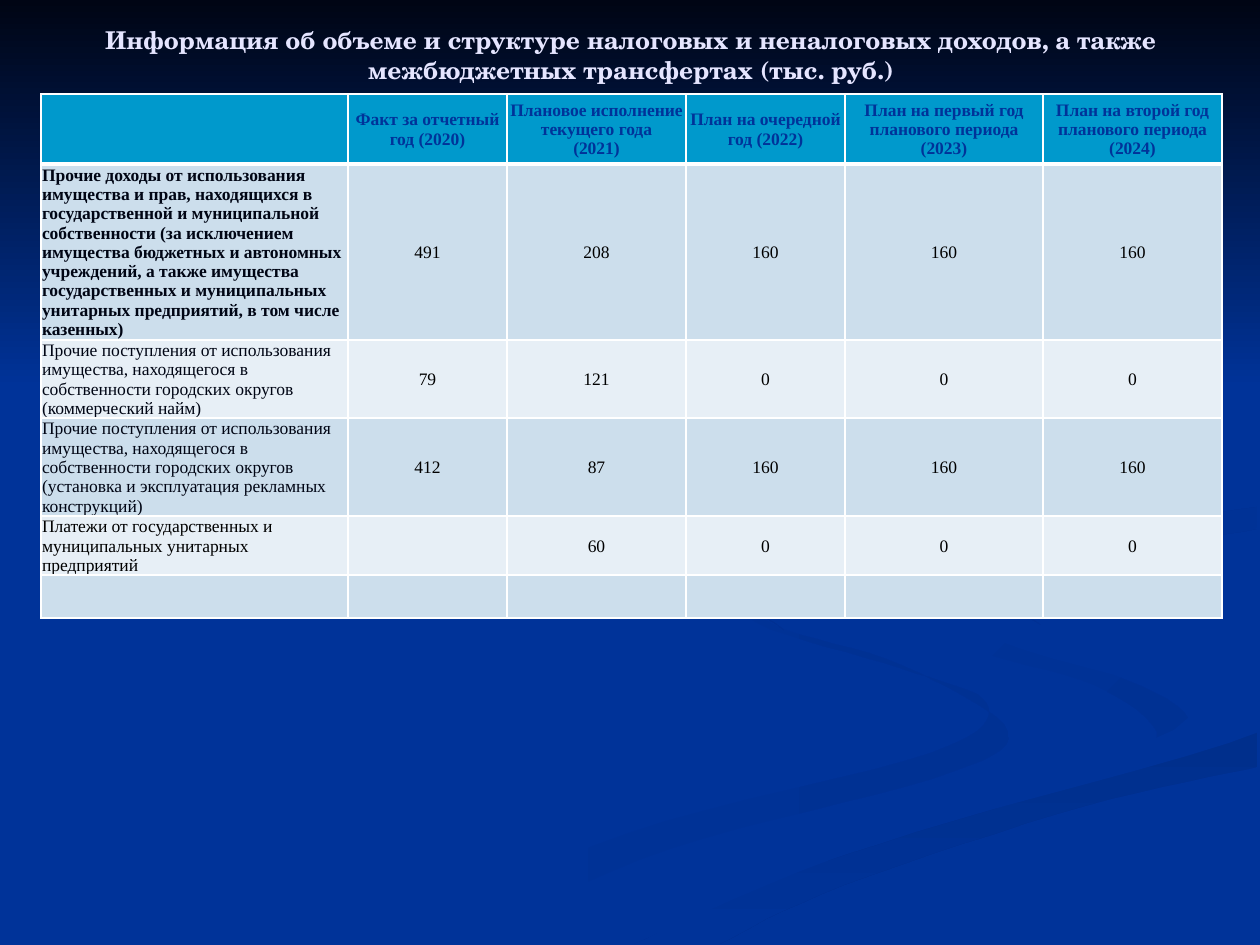
import lxml.etree
import pptx
import pptx.dml.color
import pptx.enum.text
import pptx.oxml.ns
import pptx.util

EMU_PER_PX = 914400 / 126


def px(length):
    return pptx.util.Emu(round(length * EMU_PER_PX))


def rgb(value):
    return pptx.dml.color.RGBColor.from_string(value)


deck = pptx.Presentation()
deck.slide_width, deck.slide_height = px(1260), px(945)
slide = deck.slides.add_slide(deck.slide_layouts[5])
slide.background.fill.solid()
slide.background.fill.fore_color.rgb = rgb("003399")

# Ribbons: start colour, end colour, clockwise angle, and two edges from tip to tip
ribbons = [
    ("003399", "003193", 0,
     [(724, 578), (759, 624), (900, 668), (987, 704), (931, 753), (629, 833), (378, 944)],
     [(724, 578), (774, 625), (901, 665), (1008, 732), (932, 779), (670, 849), (455, 944)]),
    ("003399", "003193", 45,
     [(912, 585), (965, 645), (1094, 685), (1157, 732), (1126, 762)],
     [(912, 585), (955, 627), (1096, 668), (1188, 718), (1126, 762)]),
    ("002F8C", "003399", 90,
     [(1257, 732), (1047, 793), (794, 873), (634, 944)],
     [(1257, 767), (1085, 806), (844, 885), (719, 944)]),
    ("003399", "003399", 0,
     [(1259, 488), (993, 532), (914, 585), (999, 641), (1188, 718), (887, 825), (601, 944)],
     [(1259, 507), (1052, 542), (1000, 605), (1259, 678), (1259, 732), (877, 843), (634, 944)]),
    ("003091", "003399", 45,
     [(1257, 507), (1070, 538), (984, 580), (1041, 625)],
     [(1257, 529), (1062, 564), (1014, 595), (1041, 625)]),
    ("002F8E", "003399", 45,
     [(960, 294), (1077, 359), (1120, 430), (1031, 486), (788, 537), (727, 582), (784, 630)],
     [(960, 294), (1089, 367), (1126, 433), (1040, 507), (818, 549), (747, 592), (784, 630)]),
]
backdrop = []
for start, end, angle, *edges in ribbons:
    # Each edge is a Catmull-Rom curve through its points
    curves = []
    for edge in edges:
        padded = [edge[0]] + edge + [edge[-1]]
        curve = []
        for a, b, c, d in zip(padded, padded[1:], padded[2:], padded[3:]):
            for t in (i / 8 for i in range(8)):
                curve.append(tuple(
                    q + t * (s - p + t * (2 * p - 5 * q + 4 * s - u
                                          + t * (3 * (q - s) + u - p))) / 2
                    for p, q, s, u in zip(a, b, c, d)))
        curves.append(curve + [edge[-1]])
    backdrop.append((start, end, angle, curves[0] + curves[1][::-1]))

# Dark shade across the top
backdrop.append(("000514", "003399", 90, [(0, 0), (0, 388), (1260, 388), (1260, 0)]))

for start, end, angle, outline in backdrop:
    builder = slide.shapes.build_freeform(*outline[0], scale=EMU_PER_PX)
    builder.add_line_segments(outline[1:], close=True)
    area = builder.convert_to_shape()
    area.shadow.inherit = False
    area.line.fill.background()
    area.fill.gradient()
    area.fill.gradient_angle = -angle % 360
    for stop, colour in zip(area.fill.gradient_stops, (start, end)):
        stop.color.rgb = rgb(colour)

# Revenue table
header = ["", "Факт за отчетный год (2020)", "Плановое исполнение текущего года\v(2021)",
          "План на очередной год (2022)", "План на первый год планового периода (2023)",
          "План на второй год планового периода (2024)"]
revenues = [
    ["Прочие доходы от использования имущества и прав, находящихся в государственной и "
     "муниципальной собственности (за исключением имущества бюджетных и автономных учреждений, "
     "а также имущества государственных и муниципальных унитарных предприятий, "
     "в том числе казенных)", "491", "208", "160", "160", "160"],
    ["Прочие поступления от использования имущества, находящегося в собственности городских "
     "округов (коммерческий найм)", "79", "121", "0", "0", "0"],
    ["Прочие поступления от использования имущества, находящегося в собственности городских "
     "округов (установка и эксплуатация рекламных конструкций)",
     "412", "87", "160", "160", "160"],
    ["Платежи от государственных и муниципальных унитарных предприятий",
     "", "60", "0", "0", "0"],
    [""] * 6,
]
column_widths = [307, 159, 179, 159, 198, 179]
row_heights = [70, 176, 78, 98, 59, 43]
table = slide.shapes.add_table(6, 6, px(41), px(94), px(sum(column_widths)),
                               px(sum(row_heights))).table
for column, width in zip(table.columns, column_widths):
    column.width = px(width)
for row, height in zip(table.rows, row_heights):
    row.height = px(height)

for r, texts in enumerate([header] + revenues):
    for c, text in enumerate(texts):
        cell = table.cell(r, c)
        cell.text = text
        cell.vertical_anchor = pptx.enum.text.MSO_ANCHOR.MIDDLE
        cell.margin_left = cell.margin_right = cell.margin_top = px(1)
        cell.margin_bottom = 0

        entry = cell.text_frame.paragraphs[0]
        entry.font.name = "Times New Roman"
        entry.font.size = pptx.util.Pt(10)
        entry.font.bold = r == 0 or (r == 1 and c == 0)
        entry.font.color.rgb = rgb("003399" if r == 0 else "000514" if c == 0 and r < 4
                                   else "000000")
        if r == 0 or c > 0:
            entry.alignment = pptx.enum.text.PP_ALIGN.CENTER

        # White borders, thicker under the header
        properties = cell._tc.get_or_add_tcPr()
        for side in ("lnL", "lnR", "lnT", "lnB"):
            thick = (r, side) in ((0, "lnB"), (1, "lnT"))
            border = lxml.etree.SubElement(properties, pptx.oxml.ns.qn("a:" + side),
                                           w=str(pptx.util.Pt(3 if thick else 1)))
            paint = lxml.etree.SubElement(border, pptx.oxml.ns.qn("a:solidFill"))
            lxml.etree.SubElement(paint, pptx.oxml.ns.qn("a:srgbClr"), val="FFFFFF")
        cell.fill.solid()
        cell.fill.fore_color.rgb = rgb("0099CC" if r == 0 else "CCDEEC" if r % 2 else "E7EFF6")

# Title, brought in front of the top shade
title = slide.shapes.title
title.left, title.top, title.width, title.height = px(64), px(16), px(1134), px(77)
title.text_frame.text = ("Информация об объеме и структуре налоговых и неналоговых доходов, "
                         "а также межбюджетных трансфертах (тыс. руб.)")
title.text_frame.vertical_anchor = pptx.enum.text.MSO_ANCHOR.MIDDLE
heading = title.text_frame.paragraphs[0]
heading.alignment = pptx.enum.text.PP_ALIGN.CENTER
heading.font.name = "TeX Gyre Schola"
heading.font.size = pptx.util.Pt(14)
heading.font.bold = True
heading.font.color.rgb = rgb("E5E5FF")
slide.shapes._spTree.append(title._element)

deck.save("out.pptx")
